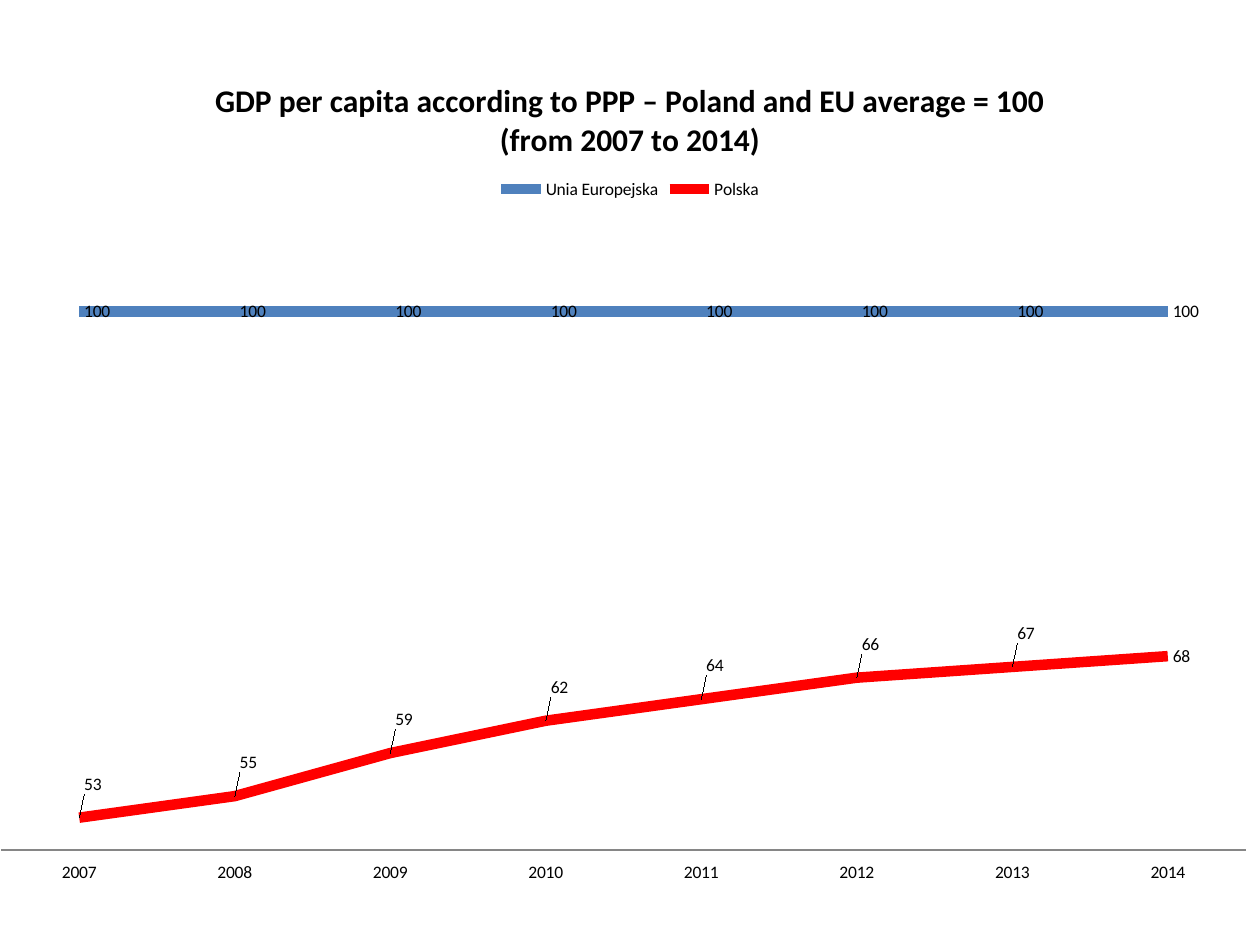
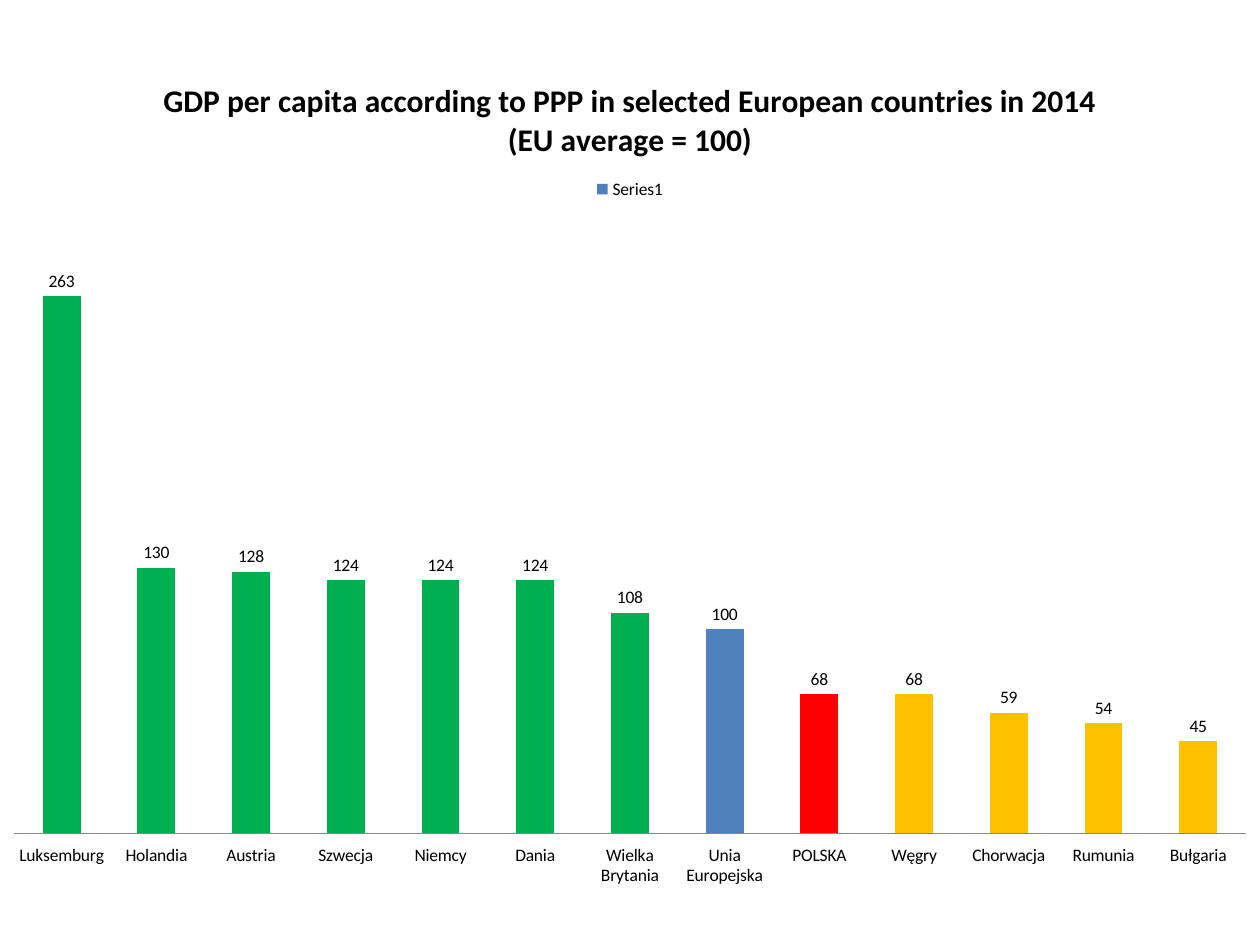
from lxml import etree
from pptx import Presentation
from pptx.chart.data import CategoryChartData
from pptx.dml.color import RGBColor
from pptx.enum.chart import (
    XL_CHART_TYPE, XL_LABEL_POSITION, XL_LEGEND_POSITION, XL_TICK_LABEL_POSITION, XL_TICK_MARK)
from pptx.oxml.ns import qn
from pptx.util import Inches, Pt

LINE = XL_CHART_TYPE.LINE
COLUMN = XL_CHART_TYPE.COLUMN_CLUSTERED
RIGHT = XL_LABEL_POSITION.RIGHT
OUTSIDE_END = XL_LABEL_POSITION.OUTSIDE_END
LEGEND_TOP = XL_LEGEND_POSITION.TOP
LABELS_LOW = XL_TICK_LABEL_POSITION.LOW
NO_TICKS = XL_TICK_MARK.NONE

FONT = "Calibri"
BLACK, AXIS_GREY = "000000", "868686"
EU_BLUE, POLAND_RED, ABOVE_GREEN, BELOW_AMBER = "4F81BD", "FF0000", "00B050", "FFC000"
CHART_BOX = (-0.09, 0.42, 10.18, 6.66)
LABEL_RISE = -0.04

YEARS = [str(year) for year in range(2007, 2015)]
POLAND_BY_YEAR = [53, 55, 59, 62, 64, 66, 67, 68]
GDP_2014 = {
    "Luksemburg": 263, "Holandia": 130, "Austria": 128, "Szwecja": 124, "Niemcy": 124,
    "Dania": 124, "Wielka Brytania": 108, "Unia Europejska": 100, "POLSKA": 68,
    "Węgry": 68, "Chorwacja": 59, "Rumunia": 54, "Bułgaria": 45,
}


def color(hex_text):
    """Turn a hex string into a colour."""
    return RGBColor.from_string(hex_text)


def style_font(font, size=10, bold=False, hex_text=BLACK):
    """Give a font the shared typeface and the given format."""
    font.name, font.size, font.bold = FONT, Pt(size), bold
    font.color.rgb = color(hex_text)


def write_text(frame, text, **font_format):
    """Write each line of the text as a formatted paragraph."""
    for number, line in enumerate(text.split("\n")):
        paragraph = frame.add_paragraph() if number else frame.paragraphs[0]
        run = paragraph.add_run()
        run.text = line
        style_font(run.font, **font_format)


def manual_layout(**settings):
    """Build a chart layout element from its settings."""
    layout = etree.Element(qn("c:layout"))
    manual = etree.SubElement(layout, qn("c:manualLayout"))
    for tag, value in settings.items():
        etree.SubElement(manual, qn(f"c:{tag}")).set("val", str(value))
    return layout


def place_plot(chart, x, y, w, h):
    """Fix the inner plot area as fractions of the chart."""
    plot_area = chart.plots[0]._element.getparent()
    for old_layout in plot_area.findall(qn("c:layout")):
        plot_area.remove(old_layout)
    plot_area.insert(0, manual_layout(
        layoutTarget="inner", xMode="edge", yMode="edge", x=x, y=y, w=w, h=h))


def show_values(series, position):
    """Label every point of a series with its value."""
    labels = series.data_labels
    labels.show_value = True
    labels.position = position
    style_font(labels.font)


def raise_labels(series, count):
    """Lift the first labels of a series above its line."""
    for index in range(count):
        series.points[index].data_label.position = RIGHT
    for label in series._element.iter(qn("c:dLbl")):
        label.find(qn("c:idx")).addnext(manual_layout(x=0, y=LABEL_RISE))


def add_gdp_chart(slide, box, kind, title, categories, series_values, minimum, maximum):
    """Add a chart with the shared title, legend and axes."""
    data = CategoryChartData()
    data.categories = categories
    for name, values in series_values.items():
        data.add_series(name, values)
    chart = slide.shapes.add_chart(kind, *map(Inches, box), data).chart
    style_font(chart.font)
    chart.has_title = True
    write_text(chart.chart_title.text_frame, title, size=18, bold=True)
    chart.chart_title.include_in_layout = False
    chart.has_legend = True
    chart.legend.position = LEGEND_TOP
    chart.legend.include_in_layout = False
    style_font(chart.legend.font)
    chart.plots[0].vary_by_categories = False

    category_axis, value_axis = chart.category_axis, chart.value_axis
    category_axis.major_tick_mark = category_axis.minor_tick_mark = NO_TICKS
    category_axis.tick_label_position = LABELS_LOW
    category_axis.has_major_gridlines = False
    category_axis.format.line.color.rgb = color(AXIS_GREY)
    category_axis.format.line.width = Pt(0.75)
    style_font(category_axis.tick_labels.font)
    value_axis.has_major_gridlines = False
    value_axis.minimum_scale, value_axis.maximum_scale = minimum, maximum
    value_axis.visible = False
    return chart


def build_trend_slide(slide, box):
    """Show Poland against the EU average over the years."""
    chart = add_gdp_chart(
        slide, box, LINE,
        "GDP per capita according to PPP – Poland and EU average = 100\n(from 2007 to 2014)",
        YEARS, {"Unia Europejska": [100] * len(YEARS), "Polska": POLAND_BY_YEAR}, 50, 110)
    place_plot(chart, 0.01, 0.18, 0.97, 0.77)
    for series, hue in zip(chart.plots[0].series, (EU_BLUE, POLAND_RED)):
        series.smooth = False
        series.format.line.color.rgb = color(hue)
        series.format.line.width = Pt(6)
        show_values(series, RIGHT)
    raise_labels(chart.plots[0].series[1], len(YEARS) - 1)


def country_color(country, value):
    """Pick a bar colour by the country's standing against the average."""
    special = {"Unia Europejska": EU_BLUE, "POLSKA": POLAND_RED}
    return special.get(country, ABOVE_GREEN if value > 100 else BELOW_AMBER)


def build_country_slide(slide, box):
    """Compare selected countries in 2014."""
    chart = add_gdp_chart(
        slide, box, COLUMN,
        "GDP per capita according to PPP in selected European countries in 2014\n"
        "(EU average = 100)",
        list(GDP_2014), {"Series1": list(GDP_2014.values())}, 0, 300)
    place_plot(chart, 0.02, 0.2, 0.96, 0.73)
    plot = chart.plots[0]
    plot.gap_width, plot.overlap = 150, -25
    bars = plot.series[0]
    bars.format.fill.solid()
    bars.format.fill.fore_color.rgb = color(EU_BLUE)
    for index, (country, value) in enumerate(GDP_2014.items()):
        fill = bars.points[index].format.fill
        fill.solid()
        fill.fore_color.rgb = color(country_color(country, value))
    show_values(bars, OUTSIDE_END)


def main():
    """Build both slides and save the presentation."""
    deck = Presentation()
    deck.slide_width, deck.slide_height = Inches(10), Inches(7.5)
    blank = deck.slide_layouts[6]
    for build in (build_trend_slide, build_country_slide):
        build(deck.slides.add_slide(blank), CHART_BOX)
    deck.save("out.pptx")


if __name__ == "__main__":
    main()
